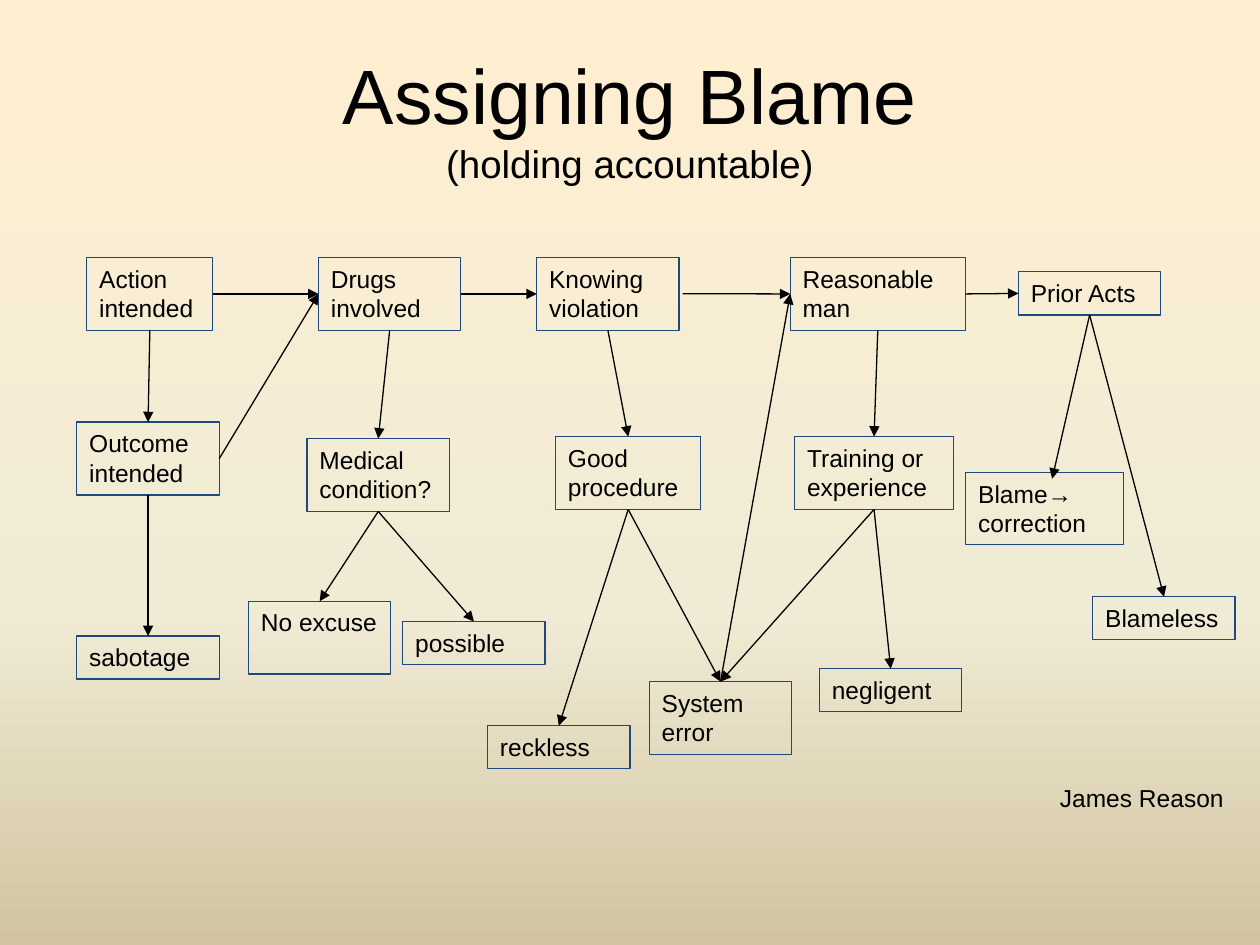
"""Build the blame decision flow slide."""
from copy import deepcopy

from lxml.etree import SubElement
from pptx import Presentation
from pptx.dml.color import RGBColor
from pptx.enum.shapes import MSO_CONNECTOR, MSO_SHAPE
from pptx.enum.text import MSO_ANCHOR, PP_ALIGN
from pptx.oxml.ns import qn
from pptx.util import Cm, Pt

HUES = {"top": "FFEFD1", "mid": "F0EBD5", "base": "D1C39F",
        "edge": "1F497D", "ink": "000000"}
TOP, LEFT, BASE, RIGHT = range(4)
ROW, WIDE, TALL, LOW = 5.19, 2.87, 1.47, 0.87

deck = Presentation()
deck.slide_width, deck.slide_height = Cm(25.4), Cm(19.05)
slide = deck.slides.add_slide(deck.slide_layouts[6])
shapes = slide.shapes


def write(shape, text, sizes, align=PP_ALIGN.LEFT, anchor=MSO_ANCHOR.TOP):
    frame = shape.text_frame
    frame.text = text
    frame.word_wrap = True
    frame.vertical_anchor = anchor
    for para in frame.paragraphs:
        para.alignment = align
        for run, size in zip(para.runs, sizes):
            run.font.name = "Arial"
            run.font.size = Pt(size)
            run.font.color.rgb = RGBColor.from_string(HUES["ink"])


def arrow(*ends):
    line = shapes.add_connector(MSO_CONNECTOR.STRAIGHT, *map(Cm, ends))
    line.line.color.rgb = RGBColor.from_string(HUES["ink"])
    line.line.width = Pt(0.75)
    SubElement(line.line._get_or_add_ln(), qn("a:tailEnd"), type="triangle")
    SubElement(line._element.spPr, qn("a:effectLst"))
    return line


fill = slide.background.fill
fill.gradient()
fill.gradient_angle = 270
stops = slide._element.find(".//" + qn("a:gsLst"))
stops.append(deepcopy(stops[-1]))
for stop, hue, place in zip(fill.gradient_stops, ("top", "mid", "base"), (0, 0.65, 1)):
    stop.color.rgb = RGBColor.from_string(HUES[hue])
    stop.position = place

title = shapes.add_textbox(Cm(1.27), Cm(0.76), Cm(22.86), Cm(3.18))
write(title, "Assigning Blame\v(holding accountable)", (44, 22),
      PP_ALIGN.CENTER, MSO_ANCHOR.MIDDLE)

boxes = {}
for text, x, y, w, h in (
    ("Action intended", 1.75, ROW, 2.54, TALL),
    ("Outcome intended", 1.55, 8.51, WIDE, TALL),
    ("sabotage", 1.55, 12.82, WIDE, LOW),
    ("Drugs involved", 6.42, ROW, WIDE, TALL),
    ("Knowing violation", 10.82, ROW, WIDE, TALL),
    ("Reasonable man", 15.93, ROW, 3.53, TALL),
    ("Prior Acts", 20.53, 5.48, WIDE, LOW),
    ("Medical condition?", 6.19, 8.84, WIDE, TALL),
    ("possible", 8.12, 12.53, WIDE, LOW),
    ("System error", 13.09, 13.74, WIDE, TALL),
    ("negligent", 16.52, 13.48, WIDE, LOW),
    ("Good procedure", 11.2, 8.8, 2.93, TALL),
    ("Blame→\ncorrection", 19.47, 9.53, 3.18, 1.45),
    ("Training or experience", 16.02, 8.8, 3.2, TALL),
    ("No excuse", 5.01, 12.12, WIDE, TALL),
    ("reckless", 9.83, 14.63, WIDE, LOW),
    ("Blameless", 22.03, 12.03, WIDE, LOW),
):
    box = shapes.add_shape(MSO_SHAPE.RECTANGLE, Cm(x), Cm(y), Cm(w), Cm(h))
    box.shadow.inherit = False
    box.fill.background()
    box.line.color.rgb = RGBColor.from_string(HUES["edge"])
    box.line.width = Pt(0.75)
    write(box, text, (14,))
    boxes[text.split()[0]] = box

for start, out, goal, side in (
    ("Action", BASE, "Outcome", TOP),
    ("Outcome", BASE, "sabotage", TOP),
    ("Outcome", RIGHT, "Drugs", LEFT),
    ("System", TOP, "Reasonable", LEFT),
    ("Action", RIGHT, "Drugs", LEFT),
    ("Drugs", RIGHT, "Knowing", LEFT),
    ("Reasonable", RIGHT, "Prior", LEFT),
    ("Drugs", BASE, "Medical", TOP),
    ("Knowing", BASE, "Good", TOP),
    ("Reasonable", BASE, "Training", TOP),
    ("Medical", BASE, "No", TOP),
    ("Medical", BASE, "possible", TOP),
    ("Good", BASE, "reckless", TOP),
    ("Good", BASE, "System", TOP),
    ("Training", BASE, "System", TOP),
    ("Training", BASE, "negligent", TOP),
    ("Prior", BASE, "Blameless", TOP),
):
    link = arrow(0, 0, 0, 0)
    link.begin_connect(boxes[start], out)
    link.end_connect(boxes[goal], side)

arrow(13.76, 5.92, 15.93, 5.92).end_connect(boxes["Reasonable"], LEFT)
arrow(21.97, 6.35, 21.21, 9.65).begin_connect(boxes["Prior"], BASE)

credit = shapes.add_textbox(Cm(20.75), Cm(15.67), Cm(4.17), Cm(LOW))
write(credit, "James Reason", (14,), PP_ALIGN.RIGHT)

deck.save("out.pptx")
